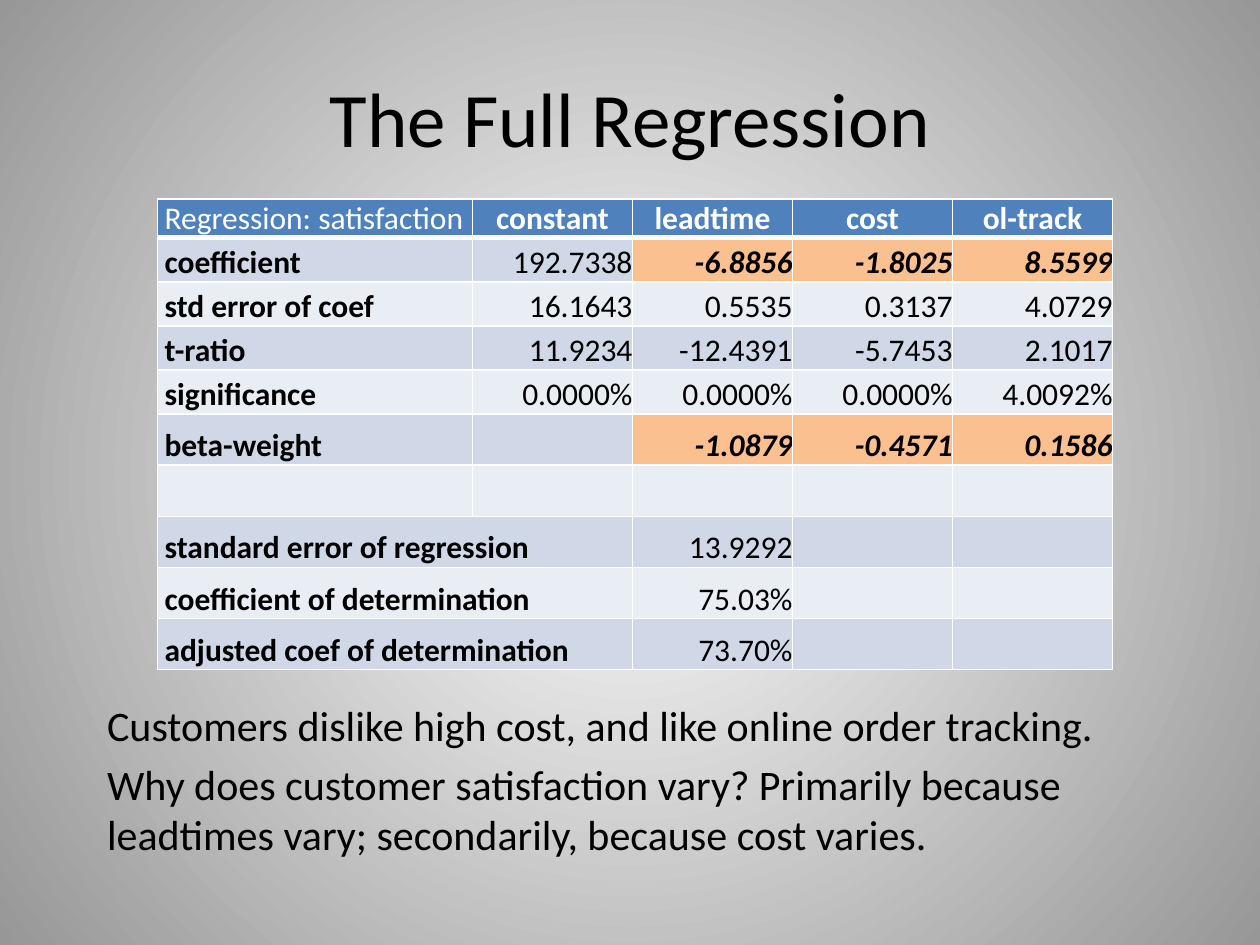
import pptx
import pptx.util
import pptx.oxml
import pptx.oxml.ns
import pptx.dml.color
import pptx.enum.text

Pt = pptx.util.Pt
RGB = pptx.dml.color.RGBColor.from_string
qn = pptx.oxml.ns.qn
NS = pptx.oxml.ns.nsdecls("a")
ALIGN = pptx.enum.text.PP_ALIGN
ANCHOR = pptx.enum.text.MSO_ANCHOR

# Content
TITLE = "The Full Regression"
ROWS = [
    [" Regression: satisfaction", "constant", "leadtime", "cost", "ol-track"],
    [" coefficient", "192.7338", "-6.8856", "-1.8025", "8.5599"],
    [" std error of coef", "16.1643", "0.5535", "0.3137", "4.0729"],
    [" t-ratio", "11.9234", "-12.4391", "-5.7453", "2.1017"],
    [" significance", "0.0000%", "0.0000%", "0.0000%", "4.0092%"],
    [" beta-weight", "", "-1.0879", "-0.4571", "0.1586"],
    ["", "", "", "", ""],
    [" standard error of regression", "", "13.9292", "", ""],
    [" coefficient of determination", "", "75.03%", "", ""],
    [" adjusted coef of determination", "", "73.70%", "", ""],
]
HIGHLIGHT_ROWS = (1, 5)
SPACER_ROW = 6
COMMENTS = [
    "Customers dislike high cost, and like online order tracking.",
    "Why does customer satisfaction vary? Primarily because leadtimes vary; "
    "secondarily, because cost varies.",
]

# Theme and layout, in points
THEME = {
    "font": "Calibri", "title": 44, "body": 24, "cell": 18,
    "text": "000000", "white": "FFFFFF", "edge": "979797",
    "header": "4F81BD", "bands": ("E9EDF4", "D0D8E8"), "highlight": "FAC090",
}
TITLE_BOX = (36, 21.6, 648, 90)
BODY_BOX = (54, 396, 612, 132)
TABLE_BOX = (90, 113.8, 545.8, 251.3)
LABEL_W, VALUE_W = 180, 91.45
HEADER_H, ROW_H, SPACER_H = 16.6, 25.2, 28.1


def write(p, text, size, color=THEME["text"], bold=False, italic=False,
          align=ALIGN.LEFT, before=None):
    p.alignment = align
    if before is not None:
        p.space_before = Pt(before)
    r = p.add_run()
    r.text = text
    f = r.font
    f.name, f.size, f.bold, f.italic = THEME["font"], Pt(size), bold, italic
    f.color.rgb = RGB(color)


def place(shape, box):
    shape.left, shape.top, shape.width, shape.height = map(Pt, box)
    shape.text_frame.word_wrap = True
    shape.text_frame.auto_size = pptx.enum.text.MSO_AUTO_SIZE.NONE


def add_borders(cell, bottom):
    tcPr = cell._tc.get_or_add_tcPr()
    widths = {"lnL": 1, "lnR": 1, "lnT": 1, "lnB": bottom}
    for i, (tag, width) in enumerate(widths.items()):
        tcPr.insert(i, pptx.oxml.parse_xml(
            f'<a:{tag} {NS} w="{Pt(width)}"><a:solidFill>'
            f'<a:srgbClr val="{THEME["white"]}"/></a:solidFill></a:{tag}>'))


def format_cell(cell, row, col, text):
    header = row == 0
    strong = row in HIGHLIGHT_ROWS and col >= 2
    fill = (THEME["header"] if header else THEME["highlight"] if strong
            else THEME["bands"][row % 2])
    cell.fill.solid()
    cell.fill.fore_color.rgb = RGB(fill)
    add_borders(cell, 3 if header else 1)
    if text:
        cell.margin_left = cell.margin_right = 0
        cell.margin_top = cell.margin_bottom = 0
        cell.vertical_anchor = ANCHOR.BOTTOM
        align = (ALIGN.LEFT if col == 0 else
                 ALIGN.CENTER if header else ALIGN.RIGHT)
        write(cell.text_frame.paragraphs[0], text, THEME["cell"],
              color=THEME["white" if header else "text"],
              bold=header != (col == 0) or strong, italic=strong, align=align)


prs = pptx.Presentation()
prs.slide_width, prs.slide_height = Pt(720), Pt(540)
s = prs.slides.add_slide(prs.slide_layouts[1])

# Radial background
fill = s.background.fill
fill.gradient()
for stop, key, position in zip(fill.gradient_stops, ("white", "edge"), (0, 1)):
    stop.color.rgb = RGB(THEME[key])
    stop.position = position
grad = next(s.element.iter(qn("a:gradFill")))
grad.replace(grad.find(qn("a:lin")), pptx.oxml.parse_xml(
    f'<a:path {NS} path="circle">'
    '<a:fillToRect l="50000" t="50000" r="50000" b="50000"/></a:path>'))

# Title
title, body = s.placeholders
place(title, TITLE_BOX)
title.text_frame.vertical_anchor = ANCHOR.MIDDLE
write(title.text_frame.paragraphs[0], TITLE, THEME["title"], align=ALIGN.CENTER)

# Comments, without bullets
place(body, BODY_BOX)
tf = body.text_frame
for i, text in enumerate(COMMENTS):
    p = tf.add_paragraph() if i else tf.paragraphs[0]
    write(p, text, THEME["body"], before=5)
    pPr = p._p.get_or_add_pPr()
    pPr.set("marL", "0")
    pPr.set("indent", "0")
    pPr.append(pptx.oxml.parse_xml(f"<a:buNone {NS}/>"))

# Regression table
frame = s.shapes.add_table(len(ROWS), len(ROWS[0]), *map(Pt, TABLE_BOX))
table = frame.table
for i, column in enumerate(table.columns):
    column.width = Pt(VALUE_W if i else LABEL_W)
for i, row in enumerate(table.rows):
    row.height = Pt({0: HEADER_H, SPACER_ROW: SPACER_H}.get(i, ROW_H))
frame.height = Pt(TABLE_BOX[3])
for i, row in enumerate(ROWS):
    for j, text in enumerate(row):
        format_cell(table.cell(i, j), i, j, text)
    if i > SPACER_ROW:
        table.cell(i, 0).merge(table.cell(i, 1))

prs.save("out.pptx")
